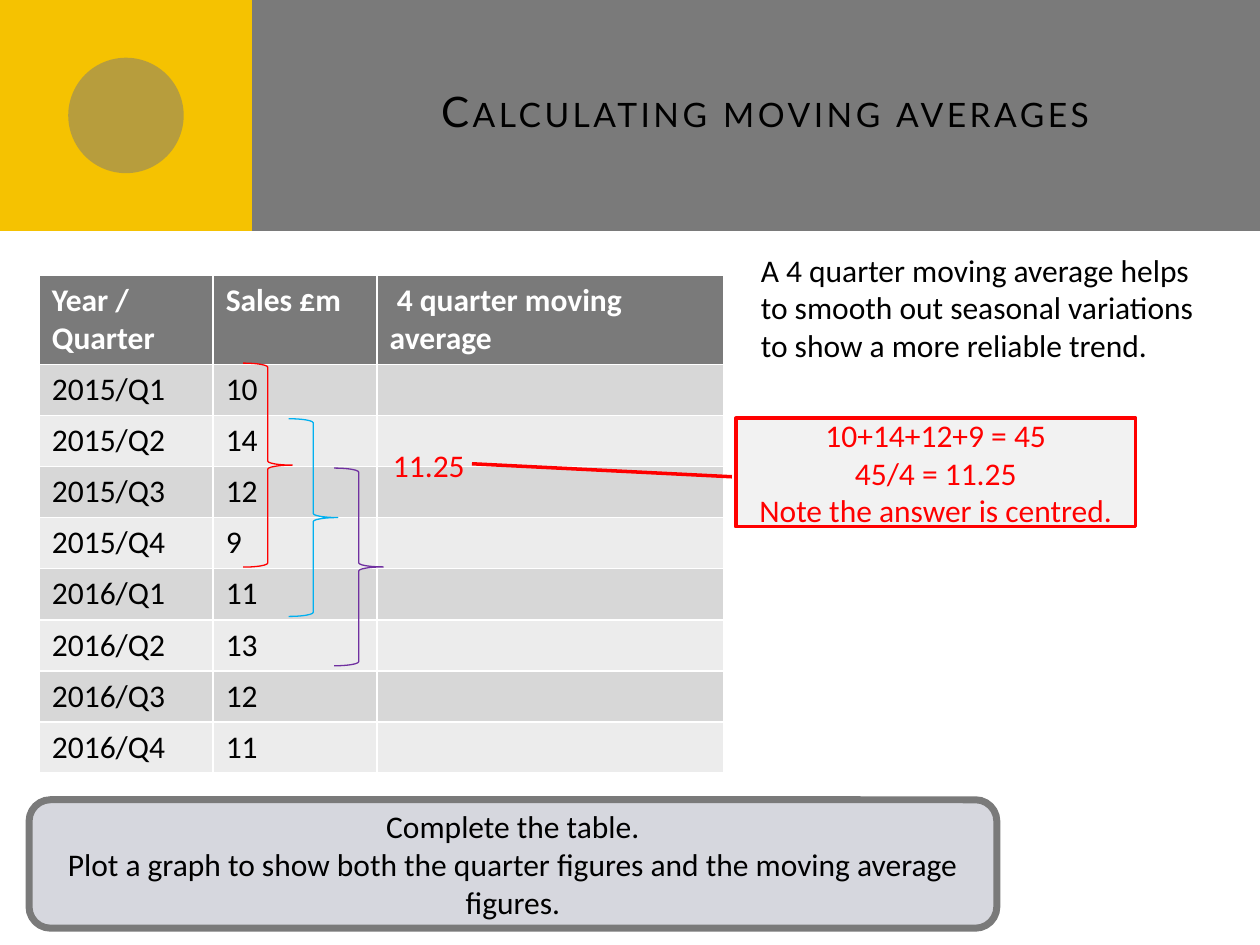
from lxml import etree
from pptx import Presentation
from pptx import util as u
from pptx.dml import color
from pptx.enum import shapes, text
from pptx.oxml import ns

GREY, YELLOW, RED, BLACK, WHITE = "7A7A7A", "F5C201", "FF0000", "000000", "FFFFFF"
CENTER = text.PP_ALIGN.CENTER
SHAPE = shapes.MSO_SHAPE


def rgb(value):
    return color.RGBColor.from_string(value)


def paint(fill, value):
    """Fill with a hex colour, or with nothing."""
    if value is None:
        fill.background()
    else:
        fill.solid()
        fill.fore_color.rgb = rgb(value)


def write(frame, content, font="Calibri", size=18, ink=BLACK, bold=False,
          align=None, anchor=None):
    """Write one paragraph per line of content."""
    frame.word_wrap = True
    frame.text = content
    if anchor is not None:
        frame.vertical_anchor = anchor
    for paragraph in frame.paragraphs:
        paragraph.alignment = align
        for run in paragraph.runs:
            run.font.name = font
            run.font.size = u.Pt(size)
            run.font.bold = bold
            run.font.color.rgb = rgb(ink)


class SlideBuilder:
    """Holds the current slide and adds elements, with lengths in points."""

    def __init__(self, slide):
        self.slide = slide

    def shape(self, kind, box, fill=None, line=None, width=1, alpha=None,
              content=None, ink=BLACK):
        shape = self.slide.shapes.add_shape(kind, *map(u.Pt, box))
        shape.shadow.inherit = False
        paint(shape.fill, fill)
        paint(shape.line.fill, line)
        if line:
            shape.line.width = u.Pt(width)
        if alpha is not None:
            fill_color = shape.fill._xPr.find(".//" + ns.qn("a:srgbClr"))
            etree.SubElement(fill_color, ns.qn("a:alpha"), val=str(alpha * 1000))
        if content:
            write(shape.text_frame, content, ink=ink, align=CENTER,
                  anchor=text.MSO_ANCHOR.MIDDLE)
        return shape

    def title(self, content, box):
        title = self.slide.shapes.title
        title.left, title.top, title.width, title.height = map(u.Pt, box)
        write(title.text_frame, content, font="Lato", size=24,
              align=text.PP_ALIGN.RIGHT, anchor=text.MSO_ANCHOR.MIDDLE)
        properties = title.text_frame.paragraphs[0].runs[0].font._element
        properties.set("cap", "small")
        properties.set("spc", "200")
        # Bring the title in front of the header band
        self.slide.shapes._spTree.append(title._element)

    def text_box(self, content, box, ink=BLACK):
        shape = self.slide.shapes.add_textbox(*map(u.Pt, box))
        write(shape.text_frame, content, ink=ink)
        shape.text_frame.auto_size = text.MSO_AUTO_SIZE.SHAPE_TO_FIT_TEXT

    def table(self, rows, left, top, widths, row_height):
        frame = self.slide.shapes.add_table(
            len(rows), len(widths), u.Pt(left), u.Pt(top),
            u.Pt(sum(widths)), u.Pt(row_height * len(rows)))
        table = frame.table
        for column, width in zip(table.columns, widths):
            column.width = u.Pt(width)
        for index, row in enumerate(rows):
            table.rows[index].height = u.Pt(row_height)
            header = index == 0
            fill = GREY if header else ("ECECEC", "D7D7D7")[index % 2]
            for cell, content in zip(table.rows[index].cells, row):
                paint(cell.fill, fill)
                write(cell.text_frame, content, bold=header,
                      ink=WHITE if header else BLACK)
                # Empty cells keep the row height of the filled ones
                cell.text_frame.paragraphs[0].font.size = u.Pt(18)


def main():
    presentation = Presentation()
    presentation.slide_width, presentation.slide_height = u.Pt(720), u.Pt(540)
    slide = presentation.slides.add_slide(presentation.slide_layouts[5])
    builder = SlideBuilder(slide)

    # Header band and title
    builder.shape(SHAPE.RECTANGLE, (0, 0, 720, 132), GREY)
    builder.shape(SHAPE.RECTANGLE, (0, 0, 144, 132), YELLOW)
    builder.shape(SHAPE.OVAL, (39, 33, 66, 66), GREY, alpha=50)
    builder.title("Calculating moving averages", (192, 18, 492, 90))

    # Sales table, with the averages left to complete
    sales = [10, 14, 12, 9, 11, 13, 12, 11]
    rows = [("Year / Quarter", "Sales £m", " 4 quarter moving average")]
    for index, value in enumerate(sales):
        rows.append((f"{2015 + index // 4}/Q{index % 4 + 1}", str(value), ""))
    builder.table(rows, 22.5, 157, (99.3, 93.7, 198.3), 29.2)

    # Worked example and task
    callout = builder.shape(
        SHAPE.LINE_CALLOUT_1, (420.5, 239, 228.5, 62), "F2F2F2", RED, 2, ink=RED,
        content="10+14+12+9 = 45\n45/4 = 11.25\nNote the answer is centred.")
    for index, value in enumerate((0.54, -0.01, 0.42, -0.66)):
        callout.adjustments[index] = value
    builder.shape(
        SHAPE.ROUNDED_RECTANGLE, (16.6, 457, 553, 73.4), "D6D7DE", GREY, 4,
        content="Complete the table.\nPlot a graph to show both the quarter "
                "figures and the moving average figures.")

    # One brace for each group of four quarters
    braces = ((RED, 207.5, 116.6), ("00B0F0", 239.3, 113), ("7030A0", 267.5, 113))
    for index, (line, top, height) in enumerate(braces):
        builder.shape(SHAPE.RIGHT_BRACE, (139 + 26 * index, top, 28, height),
                      line=line, width=0.75)

    # First average and explanation
    builder.text_box("11.25", (217.5, 251.5, 57.5, 29), RED)
    builder.text_box("A 4 quarter moving average helps to smooth out seasonal "
                     "variations to show a more reliable trend.",
                     (427.7, 139.7, 272, 72.7))

    presentation.save("out.pptx")


if __name__ == "__main__":
    main()
